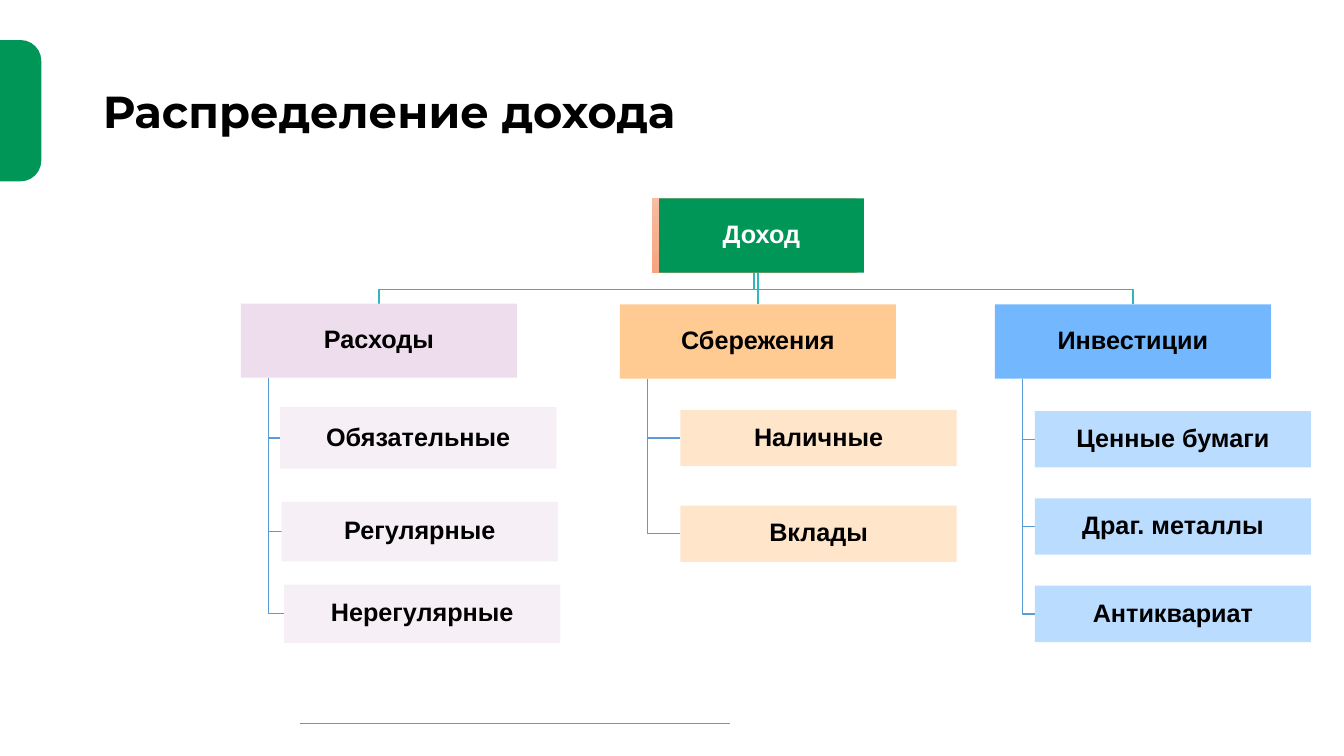
from pptx import Presentation
from pptx.dml.color import RGBColor
from pptx.enum import shapes, text
from pptx.oxml import ns
from pptx.util import Cm, Pt

BLACK = RGBColor(0, 0, 0)
WHITE = RGBColor(255, 255, 255)
GREEN = RGBColor(0x00, 0x96, 0x57)
TEAL = RGBColor(0x30, 0xB7, 0xBC)
BLUE = RGBColor(0x59, 0x9B, 0xD5)
PEACH = RGBColor(0xF7, 0xBC, 0xA2)
CORAL = RGBColor(0xF7, 0xA4, 0x7F)
LILAC = RGBColor(0xEE, 0xDE, 0xED)
PALE_LILAC = RGBColor(0xF6, 0xEF, 0xF6)
ORANGE = RGBColor(0xFF, 0xCB, 0x93)
PALE_ORANGE = RGBColor(0xFF, 0xE5, 0xC9)
SKY = RGBColor(0x73, 0xB8, 0xFF)
PALE_SKY = RGBColor(0xB9, 0xDC, 0xFF)

WIDTH, HEIGHT = 6.96, 1.87
ROOT_X, ROOT_Y, ROOT_W = 16.61, 5.0, 5.16
BUS_Y = 7.29

# Head: name, left, top, colour, start of its line under the root;
# then item colour and items: name, left, top, height
BRANCHES = [
    ("Расходы", 6.07, 7.65, LILAC, 19.1, PALE_LILAC, [
        ("Обязательные", 7.06, 10.26, 1.55),
        ("Регулярные", 7.1, 12.65, 1.5),
        ("Нерегулярные", 7.16, 14.73, 1.47)]),
    ("Сбережения", 15.62, 7.67, ORANGE, 19, PALE_ORANGE, [
        ("Наличные", 17.15, 10.33, 1.42),
        ("Вклады", 17.15, 12.74, 1.42)]),
    ("Инвестиции", 25.07, 7.67, SKY, 19, PALE_SKY, [
        (name, 26.08, 10.36 + 2.2 * i, 1.42)
        for i, name in enumerate(["Ценные бумаги", "Драг. металлы", "Антиквариат"])]),
]


def add_block(slide, x, y, w, h, kind=shapes.MSO_SHAPE.RECTANGLE):
    """Add a preset shape without outline or shadow."""
    block = slide.shapes.add_shape(kind, Cm(x), Cm(y), Cm(w), Cm(h))
    block.shadow.inherit = False
    block.line.fill.background()
    return block


def add_box(slide, name, x, y, w, h, fill, color=BLACK):
    box = add_block(slide, x, y, w, h)
    box.fill.solid()
    box.fill.fore_color.rgb = fill
    frame = box.text_frame
    frame.word_wrap = True
    frame.vertical_anchor = text.MSO_ANCHOR.MIDDLE
    frame.margin_left = frame.margin_right = Cm(0.05)
    frame.margin_top = frame.margin_bottom = Cm(0.05)
    frame.text = name
    para = frame.paragraphs[0]
    para.alignment = text.PP_ALIGN.CENTER
    style(para, "Arial", 18, color)


def style(para, face, size, color):
    para.line_spacing = 0.9
    font = para.font
    font.name, font.size, font.bold = face, Pt(size), True
    font.color.rgb = color


def add_path(slide, points, color):
    """Add an open line through the points."""
    first, *rest = [(Cm(x), Cm(y)) for x, y in points]
    pen = slide.shapes.build_freeform(*first)
    pen.add_line_segments(rest, close=False)
    path = pen.convert_to_shape()
    path.shadow.inherit = False
    path.fill.background()
    path.line.color.rgb = color
    path.line.width = Pt(1)


def add_title(slide, words):
    title = slide.shapes.title
    title.left, title.top = Cm(2.34), Cm(1.02)
    title.width, title.height = Cm(29.21), Cm(3.68)
    frame = title.text_frame
    frame.text = words
    frame.auto_size = text.MSO_AUTO_SIZE.NONE
    frame.vertical_anchor = text.MSO_ANCHOR.MIDDLE
    para = frame.paragraphs[0]
    para.alignment = text.PP_ALIGN.LEFT
    style(para, "Montserrat", 32, BLACK)


def add_decor(slide):
    rule = slide.shapes.add_connector(
        shapes.MSO_CONNECTOR.STRAIGHT, Cm(7.57), Cm(18.24), Cm(18.39), Cm(18.24))
    rule.line.color.rgb = TEAL
    rule.line.width = Pt(0.75)
    props = rule._element.spPr
    props.append(props.makeelement(ns.qn("a:effectLst"), {}))

    tab = add_block(slide, -1.26, 2.27, 3.56, 1.04,
                    shapes.MSO_SHAPE.ROUND_2_SAME_RECTANGLE)
    tab.rotation = 90
    tab.adjustments[0] = 0.5
    tab.fill.solid()
    tab.fill.fore_color.rgb = GREEN


def add_links(slide, x, y, start, items):
    """Join a head to the root above and to its items below."""
    mid, stem = x + WIDTH / 2, x + WIDTH / 10
    add_path(slide, [(start, ROOT_Y + HEIGHT), (start, BUS_Y), (mid, BUS_Y), (mid, y)], TEAL)
    for _, left, top, high in items:
        level = top + high / 2
        add_path(slide, [(stem, y + HEIGHT), (stem, level), (left, level)], BLUE)


def add_root(slide):
    back = add_block(slide, ROOT_X - 0.18, ROOT_Y, ROOT_W, HEIGHT)
    back.fill.gradient()
    back.fill.gradient_angle = 270
    for stop, color in zip(back.fill.gradient_stops, (PEACH, CORAL)):
        stop.color.rgb = color
    add_box(slide, "Доход", ROOT_X, ROOT_Y, ROOT_W, HEIGHT, GREEN, WHITE)


def main():
    deck = Presentation()
    deck.slide_width, deck.slide_height = Cm(33.87), Cm(19.05)
    slide = deck.slides.add_slide(deck.slide_layouts[5])
    add_title(slide, "Распределение дохода")
    add_decor(slide)
    for _, x, y, _, start, _, items in BRANCHES:
        add_links(slide, x, y, start, items)
    add_root(slide)
    for name, x, y, fill, _, pale, items in BRANCHES:
        add_box(slide, name, x, y, WIDTH, HEIGHT, fill)
        for item, left, top, high in items:
            add_box(slide, item, left, top, WIDTH, high, pale)
    deck.save("out.pptx")


if __name__ == "__main__":
    main()
